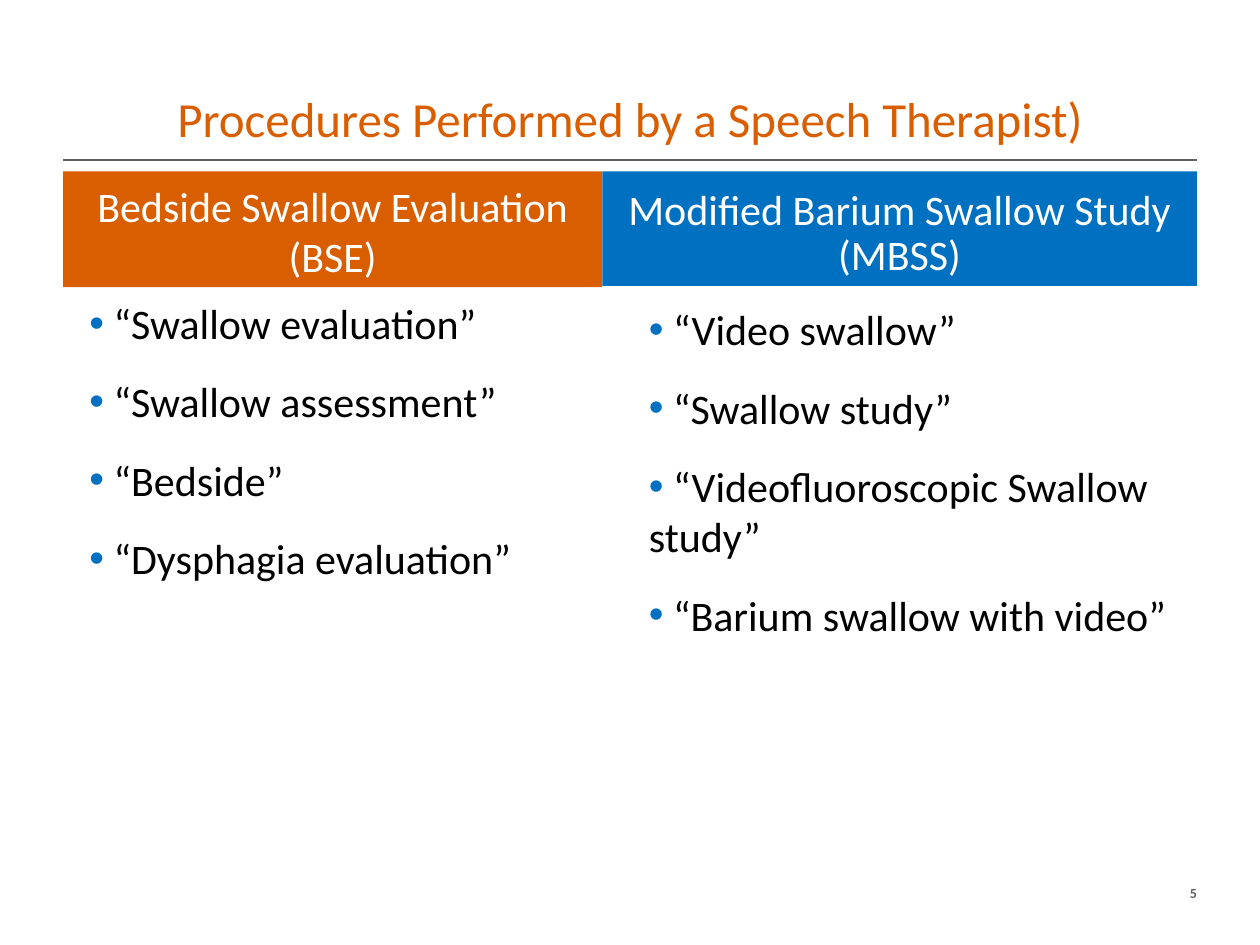
import pptx
import pptx.dml.color
import pptx.enum.shapes
import pptx.enum.text
import pptx.oxml
import pptx.oxml.ns
import pptx.util
from pptx.util import Inches

ALIGN = pptx.enum.text.PP_ALIGN
ANCHOR = pptx.enum.text.MSO_ANCHOR

# Content
TITLE = "Procedures Performed by a Speech Therapist)"
PAGE = "5"
COLUMNS = [
    dict(head="Bedside Swallow Evaluation\v(BSE)", fill="orange", spacing=1.0,
         head_box=(0.5, 1.36, 4.28, 0.92), list_box=(0.41, 2.36, 4.2, 4.35),
         items=["“Swallow evaluation”", "“Swallow assessment”", "“Bedside”",
                "“Dysphagia evaluation”"]),
    dict(head="Modified Barium Swallow Study (MBSS)", fill="blue", spacing=0.9,
         head_box=(4.78, 1.36, 4.72, 0.91), list_box=(4.85, 2.41, 4.74, 4.37),
         items=["“Video swallow”", "“Swallow study”",
                "“Videofluoroscopic Swallow study”", "“Barium swallow with video”"]),
]
THEME = dict(font="Calibri", title=28, body=24, page=8, orange="D95E00",
             blue="0070C0", grey="5F6062", black="000000", white="FFFFFF")


def rgb(name):
    return pptx.dml.color.RGBColor.from_string(THEME[name])


def place(shape, box):
    shape.left, shape.top, shape.width, shape.height = map(Inches, box)


def add_bullet(p):
    pPr = p._p.get_or_add_pPr()
    pPr.set("marL", str(Inches(0.3)))
    pPr.set("indent", "0")
    ns = pptx.oxml.ns.nsdecls("a")
    for xml in (f'<a:buClr {ns}><a:srgbClr val="{THEME["blue"]}"/></a:buClr>',
                f'<a:buFont {ns} typeface="Arial"/>',
                f'<a:buChar {ns} char="•"/>'):
        pPr.append(pptx.oxml.parse_xml(xml))


def write(shape, *texts, size="body", color="black", bold=False, align=ALIGN.LEFT,
          anchor=ANCHOR.TOP, inset=(0, 0), spacing=1.0, after=0, bullet=False):
    tf = shape.text_frame
    tf.word_wrap = True
    tf.auto_size = pptx.enum.text.MSO_AUTO_SIZE.NONE
    tf.vertical_anchor = anchor
    tf.margin_left = tf.margin_right = Inches(inset[0])
    tf.margin_top = tf.margin_bottom = Inches(inset[1])
    for i, text in enumerate(texts):
        p = tf.add_paragraph() if i else tf.paragraphs[0]
        p.text = text
        if bullet:
            add_bullet(p)
        p.alignment = align
        p.line_spacing = spacing
        p.space_before = pptx.util.Pt(0)
        p.space_after = pptx.util.Pt(after)
        for r in p.runs:
            r.font.name = THEME["font"]
            r.font.size = pptx.util.Pt(THEME[size])
            r.font.bold = bold
            r.font.color.rgb = rgb(color)


prs = pptx.Presentation()
prs.slide_width, prs.slide_height = Inches(10), Inches(7.5)
s = prs.slides.add_slide(prs.slide_layouts[3])
title, *lists = s.placeholders

# Title and the rule below it
place(title, (0.5, 0.3, 9, 0.87))
write(title, TITLE, size="title", color="orange", align=ALIGN.CENTER,
      anchor=ANCHOR.BOTTOM, spacing=pptx.util.Pt(26))
rule = s.shapes.add_connector(pptx.enum.shapes.MSO_CONNECTOR.STRAIGHT,
                              Inches(0.5), Inches(1.27), Inches(9.5), Inches(1.27))
rule.line.color.rgb = rgb("grey")
rule.line.width = pptx.util.Pt(0.75)
rule._element.spPr.append(pptx.oxml.parse_xml(
    f'<a:effectLst {pptx.oxml.ns.nsdecls("a")}/>'))

# Columns: coloured heading over a bulleted list
for column, body in zip(COLUMNS, lists):
    place(body, column["list_box"])
    write(body, *[f" {item}" for item in column["items"]], after=16, bullet=True)
    head = s.shapes.add_shape(pptx.enum.shapes.MSO_SHAPE.RECTANGLE,
                              *map(Inches, column["head_box"]))
    head.shadow.inherit = False
    head.fill.solid()
    head.fill.fore_color.rgb = rgb(column["fill"])
    head.line.fill.background()
    write(head, column["head"], color="white", align=ALIGN.CENTER,
          anchor=ANCHOR.BOTTOM, inset=(0.1, 0.05), spacing=column["spacing"])

# Page number
page = s.shapes.add_textbox(*map(Inches, (9.13, 6.91, 0.37, 0.36)))
write(page, PAGE, size="page", color="grey", bold=True, align=ALIGN.RIGHT,
      anchor=ANCHOR.MIDDLE)

prs.save("out.pptx")
